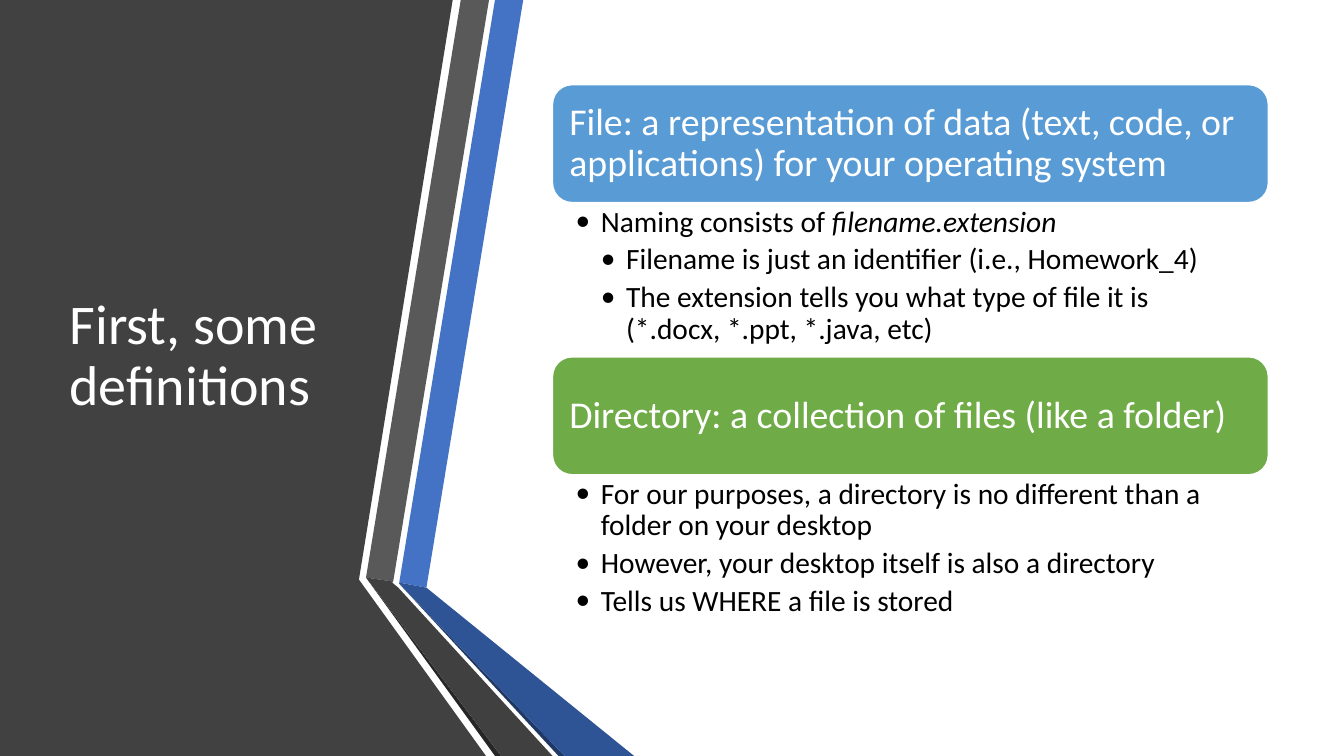
"""Build the slide that defines files and directories."""
from lxml.etree import SubElement
from pptx import Presentation
from pptx.dml.color import RGBColor
from pptx.enum.shapes import MSO_SHAPE as Shape
from pptx.enum.text import MSO_ANCHOR as Anchor, MSO_AUTO_SIZE as AutoSize, PP_ALIGN as Align
from pptx.oxml.ns import qn
from pptx.util import Pt

EMU_PER_PX = 9144
WHITE = RGBColor(0xFF, 0xFF, 0xFF)
BLACK = RGBColor(0x00, 0x00, 0x00)
PANEL = RGBColor(0x41, 0x41, 0x41)
BLUE = RGBColor(0x44, 0x72, 0xC4)
MID_BLUE = RGBColor(0x2F, 0x54, 0x96)
NAVY = RGBColor(0x1F, 0x38, 0x64)
GRAY = RGBColor(0x59, 0x59, 0x59)
DARK_GRAY = RGBColor(0x40, 0x40, 0x40)
CHARCOAL = RGBColor(0x26, 0x26, 0x26)
SKY = RGBColor(0x59, 0x9B, 0xD5)
GREEN = RGBColor(0x6F, 0xAB, 0x46)

RIBBONS = [
    (PANEL, [(0, 0), (449, 0), (356, 575), (482, 750), (0, 750)]),
    (BLUE, [(396, 578), (423, 583), (519, 0), (491, 0)]),
    (GRAY, [(485, 0), (457, 0), (363, 573), (390, 577)]),
    (CHARCOAL, [(363, 573), (491, 750), (497, 750)]),
    (NAVY, [(396, 579), (554, 750), (560, 750)]),
    (MID_BLUE, [(396, 579), (560, 750), (629, 750), (423, 583), (396, 578)]),
    (DARK_GRAY, [(548, 750), (395, 583), (389, 578), (390, 577), (363, 573), (497, 750)]),
]
DEFINITIONS = [
    (SKY, "File: a representation of data (text, code, or applications) for your operating system", [
        (1, "Naming consists of ", "filename.extension"),
        (2, "Filename is just an identifier (i.e., Homework_4)", ""),
        (2, "The extension tells you what type of file it is (*.docx, *.ppt, *.java, etc)", ""),
    ]),
    (GREEN, "Directory: a collection of files (like a folder)", [
        (1, "For our purposes, a directory is no different than a folder on your desktop", ""),
        (1, "However, your desktop itself is also a directory", ""),
        (1, "Tells us WHERE a file is stored", ""),
    ]),
]
LEFT, TOP, WIDTH = 548, 84, 710
HEADING_HEIGHT, LIST_HEIGHT = 117, 153


def px(length):
    """Turn px into EMU."""
    return length * EMU_PER_PX


class SlideWriter:
    """Hold the style and the current slide, and draw its elements."""

    font = "Calibri"
    line_spacing = 0.9

    def __init__(self, page):
        """Keep the slide to draw on."""
        self.page = page

    def ribbon(self, color, points):
        """Draw a filled outline through the points."""
        builder = self.page.shapes.build_freeform(*points[0], scale=EMU_PER_PX)
        builder.add_line_segments(points[1:], close=True)
        self.paint(builder.convert_to_shape(), color)

    def heading(self, text, place, color):
        """Draw a rounded bar with a heading in it."""
        box = self.page.shapes.add_shape(Shape.ROUNDED_RECTANGLE, *map(px, place))
        self.paint(box, color)
        box.line.color.rgb = WHITE
        box.line.width = Pt(1)
        self.frame(box.text_frame, (11, 11, 11, 11), Anchor.MIDDLE)
        box.text_frame.text = text
        self.style(box.text_frame.paragraphs[0], 27, WHITE)

    def title(self, text, place):
        """Place and format the title."""
        box = self.page.shapes.title
        self.move(box, place)
        self.frame(box.text_frame, (10, 5, 10, 5), Anchor.MIDDLE)
        box.text_frame.text = text
        self.style(box.text_frame.paragraphs[0], 40, WHITE)

    def bullets(self, box, items, place):
        """Fill a body placeholder with a bulleted list."""
        self.move(box, place)
        frame = box.text_frame
        self.frame(frame, (23, 4, 21, 4), Anchor.TOP)
        frame.text = "\n".join(text for _, text, _ in items)
        for index, (para, (level, _, tail)) in enumerate(zip(frame.paragraphs, items)):
            para.level = level
            if tail:
                span = para.add_run()
                span.text = tail
                span.font.italic = True
            self.style(para, 21, BLACK, 4.2 if index else 0)
            self.bullet(para, level)

    def bullet(self, para, level):
        """Give a paragraph a hanging round bullet."""
        properties = para._p.get_or_add_pPr()
        properties.set("marL", str(px(25 * level)))
        properties.set("indent", str(px(-25)))
        color = SubElement(properties, qn("a:buClr"))
        SubElement(color, qn("a:srgbClr"), val=str(BLACK))
        SubElement(properties, qn("a:buFont"), typeface=self.font)
        SubElement(properties, qn("a:buChar"), char="•")

    def move(self, box, place):
        """Set a placeholder's place and bring it to the front."""
        box.left, box.top, box.width, box.height = map(px, place)
        self.page.shapes.element.append(box.element)

    def paint(self, shape, color):
        """Fill a shape and remove its line and shadow."""
        shape.shadow.inherit = False
        shape.fill.solid()
        shape.fill.fore_color.rgb = color
        shape.line.fill.background()

    def frame(self, frame, insets, anchor):
        """Set the wrapping, insets and anchor of a text frame."""
        frame.word_wrap = True
        frame.auto_size = AutoSize.NONE
        frame.vertical_anchor = anchor
        (frame.margin_left, frame.margin_top,
         frame.margin_right, frame.margin_bottom) = map(px, insets)

    def style(self, para, size, color, space_before=0):
        """Format a paragraph and its runs."""
        para.alignment = Align.LEFT
        para.line_spacing = self.line_spacing
        para.space_before = Pt(space_before)
        para.space_after = Pt(0)
        for span in para.runs:
            span.font.name = self.font
            span.font.size = Pt(size)
            span.font.color.rgb = color


def main():
    """Build and save the deck."""
    deck = Presentation()
    deck.slide_width, deck.slide_height = px(1333), px(750)
    page = deck.slides.add_slide(deck.slide_layouts.get_by_name("Two Content"))
    writer = SlideWriter(page)
    bodies = list(page.placeholders)[1:]
    for color, points in RIBBONS:
        writer.ribbon(color, points)
    writer.title("First, some definitions", (59, 75, 304, 558))
    top = TOP
    for body, (color, heading, items) in zip(bodies, DEFINITIONS):
        writer.heading(heading, (LEFT, top, WIDTH, HEADING_HEIGHT), color)
        top += HEADING_HEIGHT
        writer.bullets(body, items, (LEFT, top, WIDTH, LIST_HEIGHT))
        top += LIST_HEIGHT
    deck.save("out.pptx")


if __name__ == "__main__":
    main()
